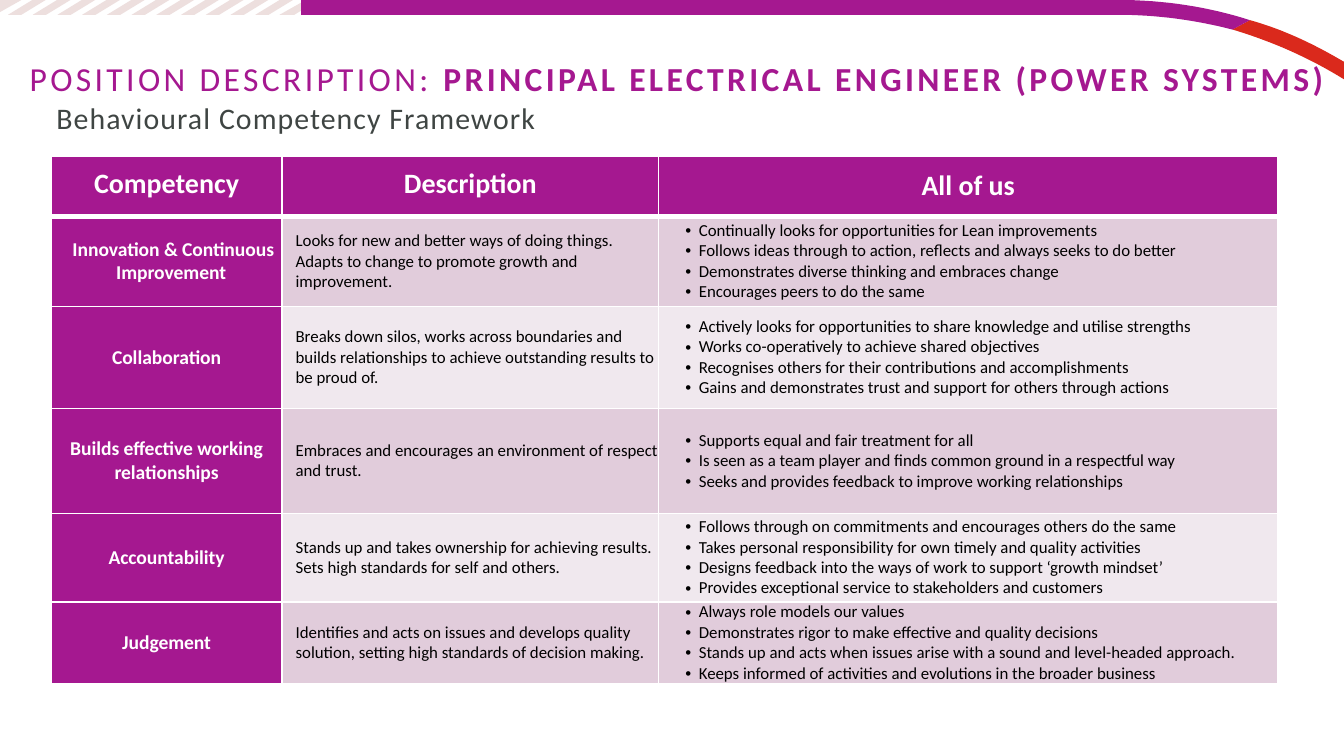
from dataclasses import dataclass

from lxml.etree import SubElement
from pptx import Presentation
from pptx.dml.color import RGBColor
from pptx.enum.text import MSO_ANCHOR as Anchor, MSO_AUTO_SIZE as AutoSize, PP_ALIGN as Align
from pptx.oxml.ns import qn
from pptx.util import Inches, Pt

PURPLE, RED, STRIPE = "A51890", "DA291C", "EDDFDE"
WHITE, BLACK, GREY = "FFFFFF", "000000", "3F4543"
BANDS = ("E1CCDB", "F0E8EE")
FONT = "Calibri"

Point = tuple[float, float]


@dataclass
class Competency:
    name: str
    description: str
    behaviours: list[str]
    height: float


HEADINGS = ("Competency", "Description", "All of us")
HEADING_HEIGHT = 0.45
COLUMN_WIDTHS = (1.72, 2.8, 4.61)
COMPETENCIES = [
    Competency(
        "Innovation & Continuous Improvement ",
        "Looks for new and better ways of doing things. Adapts to change to promote growth and improvement.",
        ["Continually looks for opportunities for Lean improvements",
         "Follows ideas through to action, reflects and always seeks to do better",
         "Demonstrates diverse thinking and embraces change",
         "Encourages peers to do the same"], 0.67),
    Competency(
        "Collaboration",
        "Breaks down silos, works across boundaries and builds relationships to achieve outstanding results "
        "to be proud of.",
        ["Actively looks for opportunities to share knowledge and utilise strengths",
         "Works co-operatively to achieve shared objectives",
         "Recognises others for their contributions and accomplishments",
         "Gains and demonstrates trust and support for others through actions"], 0.76),
    Competency(
        "Builds effective working relationships",
        "Embraces and encourages an environment of respect and trust.",
        ["Supports equal and fair treatment for all",
         "Is seen as a team player and finds common ground in a respectful way",
         "Seeks and provides feedback to improve working relationships"], 0.78),
    Competency(
        "Accountability",
        "Stands up and takes ownership for achieving results. Sets high standards for self and others.",
        ["Follows through on commitments and encourages others do the same",
         "Takes personal responsibility for own timely and quality activities",
         "Designs feedback into the ways of work to support ‘growth mindset’",
         "Provides exceptional service to stakeholders and customers"], 0.66),
    Competency(
        "Judgement",
        "Identifies and acts on issues and develops quality solution, setting high standards of decision making.",
        ["Always role models our values",
         "Demonstrates rigor to make effective and quality decisions",
         "Stands up and acts when issues arise with a sound and level-headed approach.",
         "Keeps informed of activities and evolutions in the broader business"], 0.6),
]


def rgb(color: str) -> RGBColor:
    return RGBColor.from_string(color)


def add_run(paragraph, text: str, size: float, color: str, bold: bool = False, spacing: float = 0) -> None:
    run = paragraph.add_run()
    run.text = text
    run.font.name, run.font.size, run.font.bold = FONT, Pt(size), bold
    run.font.color.rgb = rgb(color)
    if spacing:
        run.font._element.set("spc", str(round(spacing * 100)))


def set_indent(paragraph, left: float, first: float = 0, bullet: str = "") -> None:
    props = paragraph._p.get_or_add_pPr()
    props.set("marL", str(Inches(left)))
    props.set("indent", str(Inches(first)))
    if bullet:
        SubElement(props, qn("a:buFont"), typeface="Arial")
        SubElement(props, qn("a:buChar"), char=bullet)
    else:
        SubElement(props, qn("a:buNone"))


def curve(p0: Point, p1: Point, p2: Point, p3: Point, steps: int = 16) -> list[Point]:
    """Points along a cubic Bezier curve."""
    def at(t: float, axis: int) -> float:
        u = 1 - t
        return (u**3 * p0[axis] + 3 * u**2 * t * p1[axis]
                + 3 * u * t**2 * p2[axis] + t**3 * p3[axis])
    return [(at(i / steps, 0), at(i / steps, 1)) for i in range(steps + 1)]


def draw_outline(slide, points: list[Point], color: str) -> None:
    emu = [(Inches(x), Inches(y)) for x, y in points]
    builder = slide.shapes.build_freeform(*emu[0])
    builder.add_line_segments(emu[1:], close=True)
    shape = builder.convert_to_shape()
    shape.shadow.inherit = False
    shape.fill.solid()
    shape.fill.fore_color.rgb = rgb(color)
    shape.line.fill.background()


def place_text(holder, left: float, top: float, width: float, height: float, inset_top: float):
    """Move a placeholder and return its first paragraph, ready for runs."""
    holder.left, holder.top, holder.width, holder.height = map(Inches, (left, top, width, height))
    frame = holder.text_frame
    frame.word_wrap, frame.auto_size, frame.vertical_anchor = True, AutoSize.NONE, Anchor.TOP
    frame.margin_left = frame.margin_right = frame.margin_bottom = Inches(0.04)
    frame.margin_top = Inches(inset_top)
    paragraph = frame.paragraphs[0]
    paragraph.alignment = Align.LEFT
    paragraph.space_before = Pt(0)
    set_indent(paragraph, 0)
    return paragraph


def style_cell(cell, fill: str, bottom: float = 1, top: float = 1) -> None:
    props = cell._tc.get_or_add_tcPr()
    for side, width in (("L", 1), ("R", 1), ("T", top), ("B", bottom)):
        line = SubElement(props, qn(f"a:ln{side}"), w=str(Pt(width)))
        SubElement(SubElement(line, qn("a:solidFill")), qn("a:srgbClr"), val=WHITE)
    cell.fill.solid()
    cell.fill.fore_color.rgb = rgb(fill)
    cell.vertical_anchor = Anchor.MIDDLE
    cell.margin_left = cell.margin_right = cell.margin_top = cell.margin_bottom = 0


def fill_headings(table) -> None:
    for column, heading in enumerate(HEADINGS):
        cell = table.cell(0, column)
        style_cell(cell, PURPLE, bottom=3)
        if column < 2:
            cell.margin_left = cell.margin_right = Inches(0.06)
            cell.margin_bottom = Inches(0.03)
        paragraph = cell.text_frame.paragraphs[0]
        paragraph.alignment = Align.CENTER
        add_run(paragraph, heading, 15, WHITE, bold=True)


def fill_competency(table, row: int, item: Competency) -> None:
    band = BANDS[(row - 1) % 2]
    name, description, behaviours = (table.cell(row, column) for column in range(3))
    for cell, fill in ((name, PURPLE), (description, band), (behaviours, band)):
        style_cell(cell, fill, top=3 if row == 1 else 1)

    label = name.text_frame.paragraphs[0]
    label.alignment = Align.CENTER
    set_indent(label, 0.1 if row == 1 else 0)
    add_run(label, item.name, 10.5, WHITE, bold=True)

    summary = description.text_frame.paragraphs[0]
    set_indent(summary, 0.1)
    add_run(summary, item.description, 9, BLACK)

    for i, behaviour in enumerate(item.behaviours):
        frame = behaviours.text_frame
        point = frame.add_paragraph() if i else frame.paragraphs[0]
        set_indent(point, 0.3, -0.1, "•")
        add_run(point, behaviour, 9, BLACK)


def main() -> None:
    # Widescreen slide, 16:9
    deck = Presentation()
    deck.slide_width, deck.slide_height = Inches(10), Inches(10 * 9 / 16)
    slide = deck.slides.add_slide(deck.slide_layouts[1])

    # Ribbon along the top edge
    draw_outline(slide, [(9.3, 0.15), *curve((9.17, 0.22), (9.47, 0.31), (9.74, 0.43), (10, 0.59)),
                         *curve((10, 0.46), (9.78, 0.33), (9.55, 0.22), (9.3, 0.15))], RED)
    draw_outline(slide, [*curve((9.3, 0.15), (8.99, 0.05), (8.66, 0), (8.32, 0)), (2.24, 0), (2.24, 0.11),
                         *curve((8.32, 0.11), (8.61, 0.11), (8.9, 0.15), (9.17, 0.22))], PURPLE)

    # Slanted stripes, cut off at both ends
    for i in range(11):
        x = 0.06 + i * 1.84 / 10
        draw_outline(slide, [(x + 0.18, 0), (x, 0.11), (x + 0.1, 0.11), (x + 0.28, 0)], STRIPE)
    draw_outline(slide, [(0, 0), (0, 0.09), (0.16, 0)], STRIPE)
    draw_outline(slide, [(2.24, 0.08), (2.24, 0.02), (2.08, 0.11), (2.19, 0.11)], STRIPE)

    # Title and subtitle
    title = place_text(slide.shapes.title, 0.18, 0.43, 9.82, 0.65, 0)
    add_run(title, "POSITION DESCRIPTION: ", 18, PURPLE, spacing=1.8)
    add_run(title, "PRINCIPAL ELECTRICAL ENGINEER (POWER SYSTEMS)", 18, PURPLE, bold=True, spacing=1.8)
    subtitle = place_text(slide.placeholders[1], 0.38, 0.7, 8.24, 0.3, 0.04)
    add_run(subtitle, "Behavioural Competency Framework", 16, GREY, spacing=0.6)

    # Competency table
    heights = [HEADING_HEIGHT] + [item.height for item in COMPETENCIES]
    table = slide.shapes.add_table(len(heights), len(HEADINGS), Inches(0.38), Inches(1.16),
                                   Inches(sum(COLUMN_WIDTHS)), Inches(sum(heights))).table
    for column, width in zip(table.columns, COLUMN_WIDTHS):
        column.width = Inches(width)
    for row, height in zip(table.rows, heights):
        row.height = Inches(height)
    fill_headings(table)
    for row, item in enumerate(COMPETENCIES, start=1):
        fill_competency(table, row, item)

    deck.save("out.pptx")


if __name__ == "__main__":
    main()
